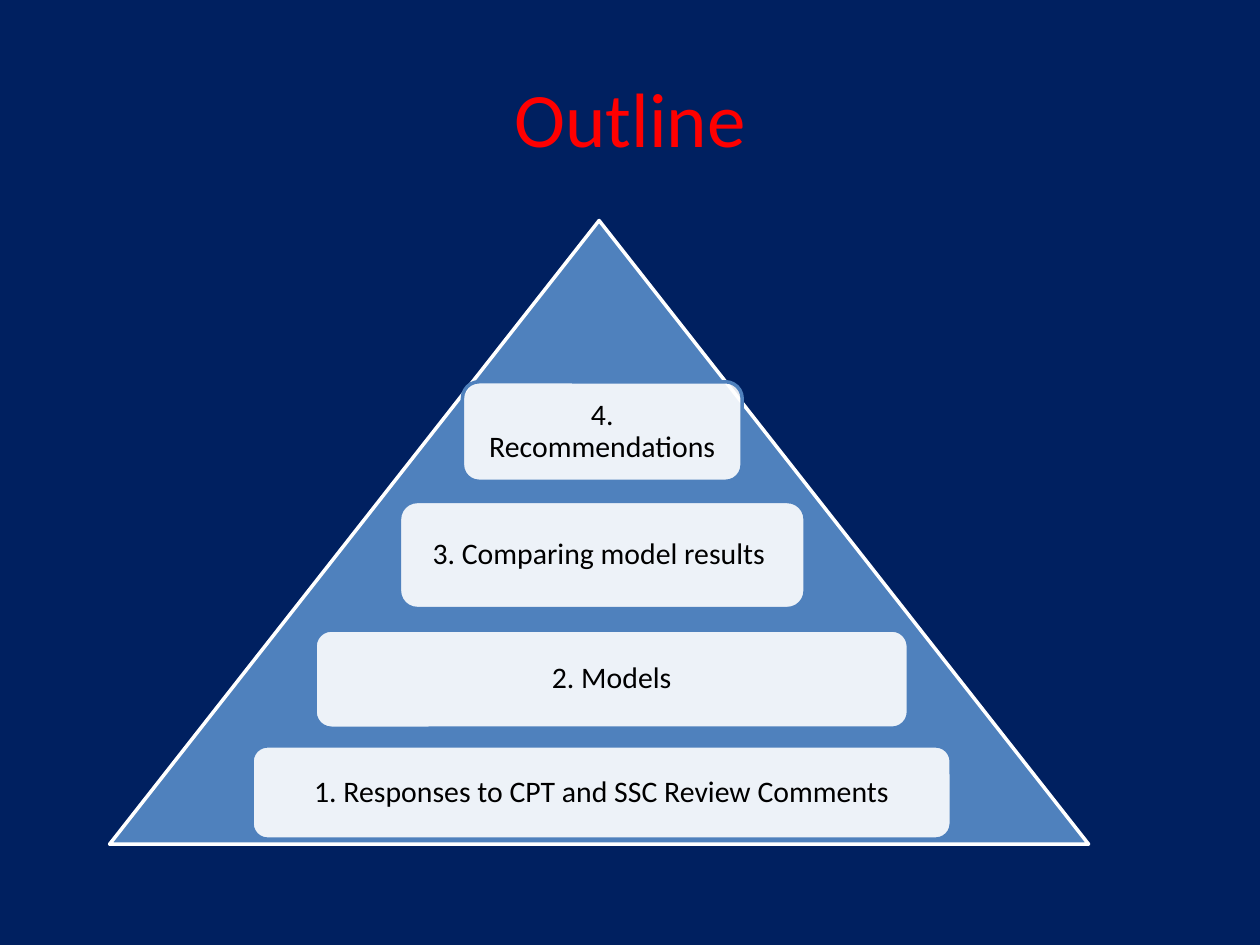
"""Build the outline slide: a pyramid carrying four numbered steps."""
from dataclasses import dataclass

import lxml.etree
import pptx
import pptx.dml.color
import pptx.enum.shapes
import pptx.enum.text
import pptx.oxml.ns
import pptx.util

RGBColor = pptx.dml.color.RGBColor
ShapeKind = pptx.enum.shapes.MSO_SHAPE

NAVY = RGBColor(0x00, 0x20, 0x60)
RED = RGBColor(0xFF, 0x00, 0x00)
BLUE = RGBColor(0x4F, 0x81, 0xBD)
WHITE = RGBColor(0xFF, 0xFF, 0xFF)
BLACK = RGBColor(0x00, 0x00, 0x00)

COLUMNS, ROWS = 100, 75
SLIDE_WIDTH, SLIDE_HEIGHT = pptx.util.Inches(10), pptx.util.Inches(7.5)
INSET = pptx.util.Inches(0.07)

TITLE_FONT = {"name": "Calibri", "size": pptx.util.Pt(44)}
STEP_FONT = {"name": "Calibri", "size": pptx.util.Pt(17)}
CENTRED = {"alignment": pptx.enum.text.PP_ALIGN.CENTER}
STEP_PARAGRAPH = {**CENTRED, "line_spacing": 0.9}
MIDDLE = {"word_wrap": True, "vertical_anchor": pptx.enum.text.MSO_ANCHOR.MIDDLE}
STEP_FRAME = {
    **MIDDLE,
    **{f"margin_{side}": INSET for side in ("left", "top", "right", "bottom")},
}


@dataclass(frozen=True)
class Area:
    column: float
    row: float
    columns: float
    rows: float

    def box(self) -> dict[str, int]:
        return {
            "left": round(SLIDE_WIDTH * self.column / COLUMNS),
            "top": round(SLIDE_HEIGHT * self.row / ROWS),
            "width": round(SLIDE_WIDTH * self.columns / COLUMNS),
            "height": round(SLIDE_HEIGHT * self.rows / ROWS),
        }


@dataclass(frozen=True)
class Step:
    text: str
    area: Area


TITLE_AREA = Area(5, 3, 90, 12.5)
PYRAMID_AREA = Area(8.7, 17.5, 77.7, 49.5)
STEPS = (
    Step("4. Recommendations", Area(36.7, 30.3, 22.2, 7.9)),
    Step("3. Comparing model results ", Area(31.7, 39.8, 32.2, 8.5)),
    Step("2. Models", Area(25, 50, 47.1, 7.8)),
    Step("1. Responses to CPT and SSC Review Comments", Area(20, 59.2, 55.5, 7.4)),
)


def apply(target: object, values: dict) -> None:
    for name, value in values.items():
        setattr(target, name, value)


def write(shape, text: str, frame: dict, paragraph: dict, font: dict, colour: RGBColor) -> None:
    apply(shape.text_frame, frame)
    line = shape.text_frame.paragraphs[0]
    apply(line, paragraph)
    run = line.add_run()
    run.text = text
    apply(run.font, font)
    run.font.color.rgb = colour


def add_figure(slide, kind, area: Area, fill: RGBColor, outline: RGBColor):
    figure = slide.shapes.add_shape(kind, **area.box())
    figure.shadow.inherit = False
    figure.fill.solid()
    figure.fill.fore_color.rgb = fill
    figure.line.color.rgb = outline
    figure.line.width = pptx.util.Pt(2)
    return figure


def add_step(slide, step: Step) -> None:
    panel = add_figure(slide, ShapeKind.ROUNDED_RECTANGLE, step.area, WHITE, BLUE)
    qn = pptx.oxml.ns.qn
    colour = panel.fill._xPr.find(qn("a:solidFill")).find(qn("a:srgbClr"))
    lxml.etree.SubElement(colour, qn("a:alpha"), val="90000")
    write(panel, step.text, STEP_FRAME, STEP_PARAGRAPH, STEP_FONT, BLACK)


def main() -> None:
    presentation = pptx.Presentation()
    apply(presentation, {"slide_width": SLIDE_WIDTH, "slide_height": SLIDE_HEIGHT})
    slide = presentation.slides.add_slide(presentation.slide_layouts.get_by_name("Title Only"))
    slide.background.fill.solid()
    slide.background.fill.fore_color.rgb = NAVY

    title = slide.shapes.title
    apply(title, TITLE_AREA.box())
    write(title, "Outline", MIDDLE, CENTRED, TITLE_FONT, RED)

    add_figure(slide, ShapeKind.ISOSCELES_TRIANGLE, PYRAMID_AREA, BLUE, WHITE)
    for step in STEPS:
        add_step(slide, step)
    presentation.save("out.pptx")


if __name__ == "__main__":
    main()
